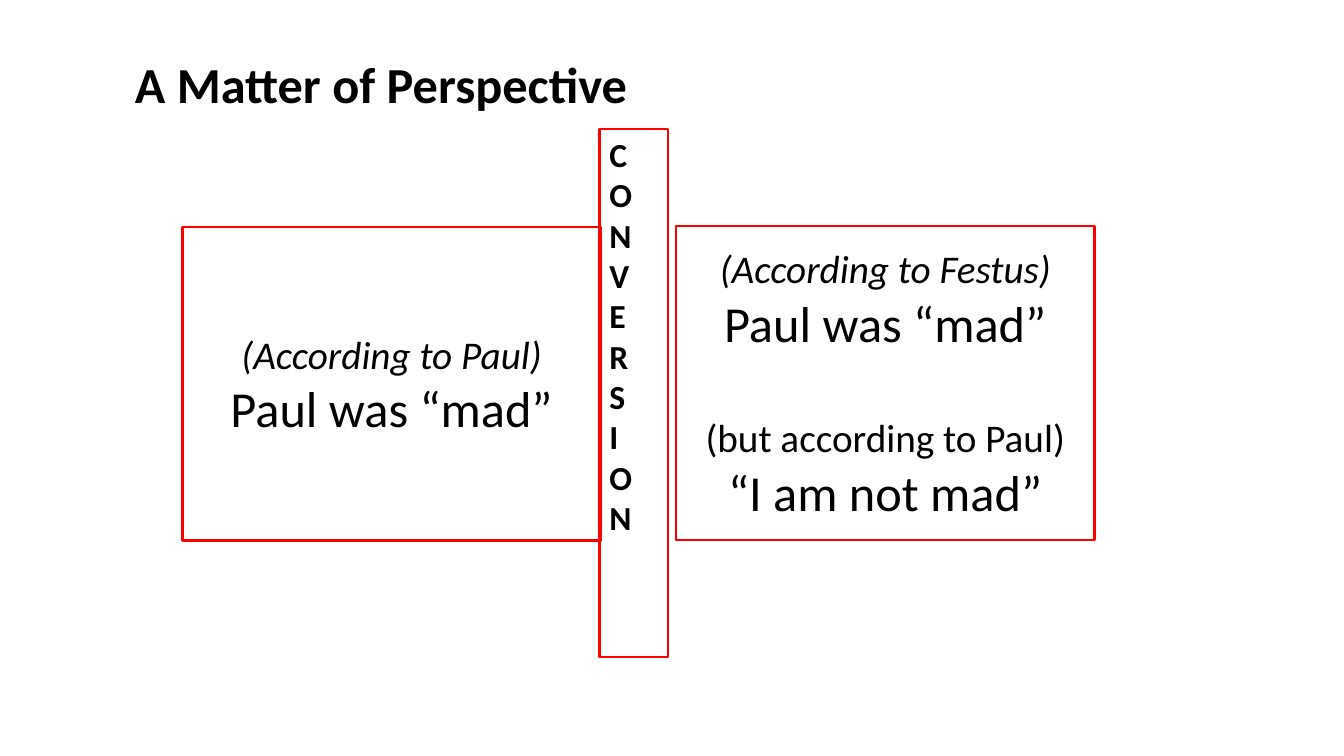
from pptx import Presentation
from pptx import util as u
from pptx.dml.color import RGBColor
from pptx.enum import shapes, text

BLACK = RGBColor(0, 0, 0)
RED = RGBColor(255, 0, 0)


class Deck:
    """Holds the text and frame style and the slide being drawn."""

    font = "Calibri"
    line_width = u.Pt(1.75)

    def __init__(self, prs):
        self.s = prs.slides.add_slide(prs.slide_layouts[6])

    def add_lines(self, tf, lines, align, anchor):
        tf.word_wrap = True
        tf.vertical_anchor = anchor
        for i, (words, size, style, gap) in enumerate(lines):
            p = tf.paragraphs[0] if i == 0 else tf.add_paragraph()
            p.alignment = align
            if gap:
                p.space_before = u.Pt(gap)
            r = p.add_run()
            r.text = words
            r.font.name = self.font
            r.font.size = u.Pt(size)
            r.font.color.rgb = BLACK
            r.font.bold = style == "bold"
            r.font.italic = style == "italic"

    def title(self, box, words):
        sp = self.s.shapes.add_textbox(*map(u.Cm, box))
        self.add_lines(sp.text_frame, [(words, 36, "bold", 0)],
                       text.PP_ALIGN.LEFT, text.MSO_ANCHOR.TOP)

    def frame(self, box, lines, align=text.PP_ALIGN.CENTER,
              anchor=text.MSO_ANCHOR.MIDDLE):
        sp = self.s.shapes.add_shape(shapes.MSO_SHAPE.RECTANGLE, *map(u.Cm, box))
        sp.shadow.inherit = False
        sp.fill.background()
        sp.line.color.rgb = RED
        sp.line.width = self.line_width
        self.add_lines(sp.text_frame, lines, align, anchor)
        return sp

    def stacked(self, box, word):
        sp = self.frame(box, [(word, 24, "bold", 0)],
                        text.PP_ALIGN.LEFT, text.MSO_ANCHOR.TOP)
        sp.element.txBody.bodyPr.set("vert", "wordArtVert")


def main():
    prs = Presentation()
    prs.slide_width, prs.slide_height = u.Cm(33.87), u.Cm(19.05)
    deck = Deck(prs)
    mad = ("Paul was “mad”", 36, "plain", 0)
    deck.title((3.15, 1.22, 23.32, 1.8), "A Matter of Perspective")
    deck.frame((4.6, 5.72, 10.54, 7.9),
               [("(According to Paul)", 28, "italic", 0), mad])
    deck.frame((17.04, 5.69, 10.54, 7.92),
               [("(According to Festus)", 28, "italic", 0), mad,
                ("(but according to Paul)", 28, "plain", 44),
                ("“I am not mad”", 36, "plain", 0)])
    deck.stacked((15.11, 3.25, 1.73, 13.31), "CONVERSION")
    prs.save("out.pptx")


if __name__ == "__main__":
    main()
